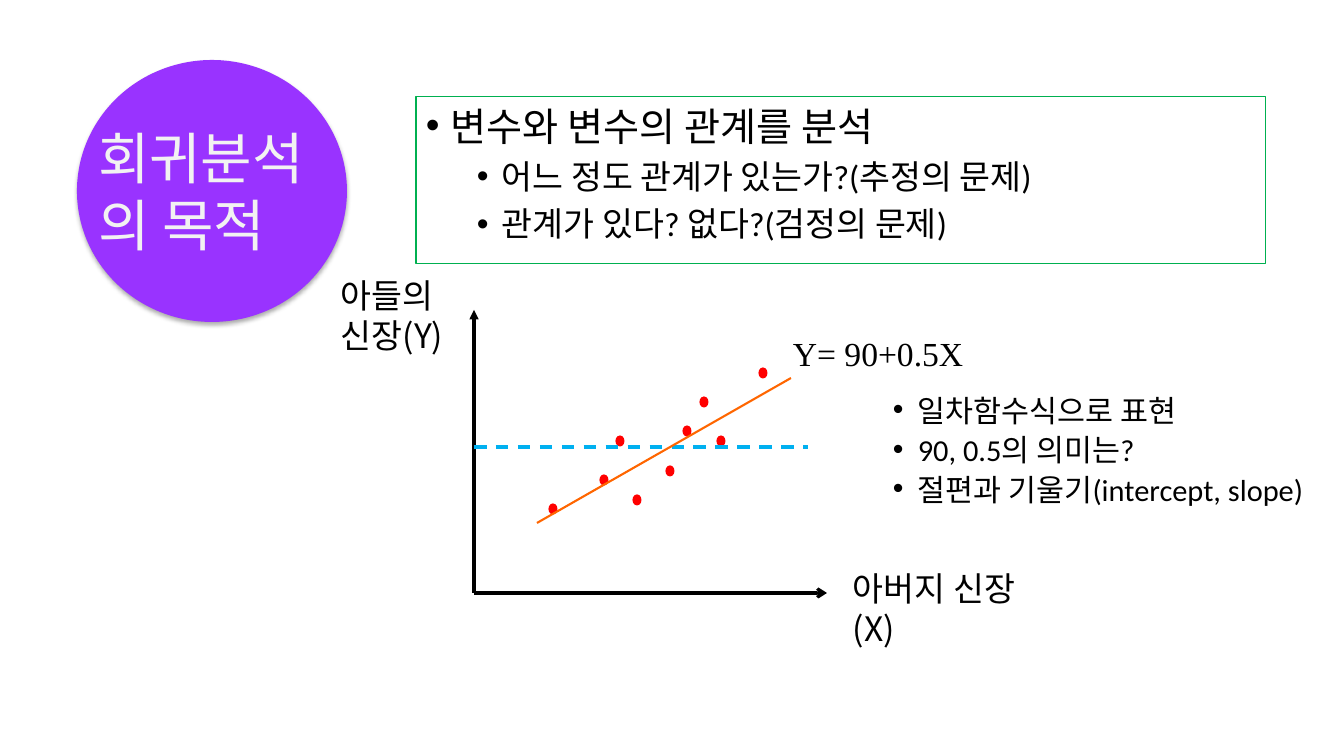
from collections import namedtuple

from lxml.etree import SubElement
from pptx import Presentation
from pptx.dml.color import RGBColor
from pptx.enum.dml import MSO_LINE as Dash
from pptx.enum.shapes import MSO_CONNECTOR as Connector, MSO_SHAPE as Shape
from pptx.enum.text import MSO_ANCHOR as Anchor, MSO_AUTO_SIZE as AutoSize, PP_ALIGN as Align
from pptx.oxml.ns import qn
from pptx.util import Pt

PX = 914400 / 100.8
BLACK = RGBColor(0x00, 0x00, 0x00)
PURPLE = RGBColor(0x99, 0x33, 0xFF)
PALE = RGBColor(0xF2, 0xF2, 0xF2)
GREEN = RGBColor(0x00, 0xB0, 0x50)
RED = RGBColor(0xFF, 0x00, 0x00)
BLUE = RGBColor(0x00, 0xB0, 0xF0)
ORANGE = RGBColor(0xFF, 0x66, 0x00)
KOREAN = "Noto Sans CJK KR"
LATIN = "Calibri"
SERIF = "Times New Roman"

Box = namedtuple("Box", "left top width height")
DOTS = [(126, 165), (142, 126), (159, 185), (75, 194), (192, 156),
        (209, 116), (226, 87), (243, 126), (285, 58)]


def px(length):
    """Turn pixels into EMU."""
    return round(length * PX)


def inside(box, left, top, width, height):
    """Return a box placed relative to another box."""
    return Box(box.left + left, box.top + top, width, height)


def place(shape, box):
    """Move and size a shape to a box."""
    shape.left, shape.top, shape.width, shape.height = map(px, box)


def add_bullet(para, indent):
    """Give a paragraph a hanging round bullet."""
    props = para._p.get_or_add_pPr()
    props.set("marL", str(px(indent)))
    props.set("indent", str(px(-25)))
    SubElement(props, qn("a:buFont"), typeface="Arial")
    SubElement(props, qn("a:buChar"), char="•")


def add_para(frame, text, size=24, font=KOREAN, color=BLACK, indent=None, before=0, spacing=1.0):
    """Write one formatted paragraph at the end of a text frame."""
    para = frame.paragraphs[0]
    if para.runs:
        para = frame.add_paragraph()
    para.alignment = Align.LEFT
    para.space_before = Pt(before)
    para.line_spacing = spacing
    if indent is not None:
        add_bullet(para, indent)
    span = para.add_run()
    span.text = text
    span.font.size = Pt(size)
    span.font.name = font
    span.font.color.rgb = color
    SubElement(span.font._element, qn("a:ea"), typeface=KOREAN)


def prepare_frame(shape):
    """Set a shape's text frame to wrap from the top and return it."""
    frame = shape.text_frame
    frame.word_wrap = True
    frame.auto_size = AutoSize.NONE
    frame.vertical_anchor = Anchor.TOP
    return frame


def add_text(page, box):
    """Add a text box and return its frame."""
    return prepare_frame(page.shapes.add_textbox(*map(px, box)))


def add_shape(page, kind, box, fill=None, line=None):
    """Add a preset shape with an optional fill and outline."""
    shape = page.shapes.add_shape(kind, *map(px, box))
    shape.shadow.inherit = False
    if fill is None:
        shape.fill.background()
    else:
        shape.fill.solid()
        shape.fill.fore_color.rgb = fill
    if line is None:
        shape.line.fill.background()
    else:
        shape.line.color.rgb = line
        shape.line.width = Pt(0.75)
    return shape


def add_line(page, box, start, end, color, width=2.25, dash=None, arrow=None):
    """Draw a straight line between two points given relative to a box."""
    points = [px(box[i] + point[i]) for point in (start, end) for i in (0, 1)]
    connector = page.shapes.add_connector(Connector.STRAIGHT, *points)
    connector.line.color.rgb = color
    connector.line.width = Pt(width)
    if dash:
        connector.line.dash_style = dash
    if arrow:
        SubElement(connector.line._get_or_add_ln(), qn("a:tailEnd"), type=arrow)
    SubElement(connector._element.spPr, qn("a:effectLst"))


def add_title_circle(page, box):
    """Draw the shaded circle with the slide title over it."""
    circle = add_shape(page, Shape.OVAL, box, fill=PURPLE)
    effects = circle._element.spPr.find(qn("a:effectLst"))
    shadow = SubElement(effects, qn("a:outerShdw"), blurRad=str(Pt(3.5)),
                        dist=str(Pt(2.2)), dir="5400000", rotWithShape="0")
    SubElement(SubElement(shadow, qn("a:srgbClr"), val="000000"), qn("a:alpha"), val="32000")
    title = page.shapes.title
    place(title, inside(box, 11, 58, 255, 146))
    add_para(prepare_frame(title), "회귀분석의 목적", size=40, color=PALE)
    circle._element.addnext(title._element)


def add_purpose(page, box):
    """Write the framed list of purposes."""
    frame = prepare_frame(add_shape(page, Shape.RECTANGLE, box, line=GREEN))
    add_para(frame, "변수와 변수의 관계를 분석", size=28, font=LATIN, indent=25, before=10)
    for text in ("어느 정도 관계가 있는가?(추정의 문제)", "관계가 있다? 없다?(검정의 문제)"):
        add_para(frame, text, font=LATIN, indent=76, before=5)


def add_equation_notes(page, box):
    """Write the bulleted remarks on the equation."""
    frame = add_text(page, box)
    for text in ("일차함수식으로 표현", "90, 0.5의 의미는?", "절편과 기울기(intercept, slope)"):
        add_para(frame, text, size=21.7, font=LATIN, indent=25, before=10, spacing=0.7)


def add_scatter(page, box):
    """Draw the axes, points, mean line, regression line and labels."""
    add_para(add_text(page, inside(box, 309, 18, 244, 50)), "Y= 90+0.5X", font=SERIF)
    origin = (0, box.height)
    add_line(page, box, origin, (box.width, box.height), BLACK, arrow="arrow")
    add_line(page, box, origin, (0, 0), BLACK, arrow="triangle")
    for left, top in DOTS:
        add_shape(page, Shape.OVAL, inside(box, left, top, 8, 10), fill=RED, line=RED)
    add_para(add_text(page, inside(box, 369, 253, 210, 50)), "아버지 신장(X)")
    add_para(add_text(page, inside(box, -143, -40, 126, 92)), "아들의 신장(Y)")
    add_line(page, box, (0, 137), (334, 137), BLUE, dash=Dash.DASH)
    add_line(page, box, (317, 68), (63, 213), ORANGE, width=1.5)


def main():
    """Build the slide and save it."""
    deck = Presentation()
    deck.slide_width, deck.slide_height = px(1344), px(756)
    page = deck.slides.add_slide(deck.slide_layouts[5])
    add_title_circle(page, Box(77, 60, 270, 262))
    add_purpose(page, Box(416, 97, 850, 167))
    add_equation_notes(page, Box(883, 397, 452, 119))
    add_scatter(page, Box(474, 310, 353, 283))
    deck.save("out.pptx")


if __name__ == "__main__":
    main()
